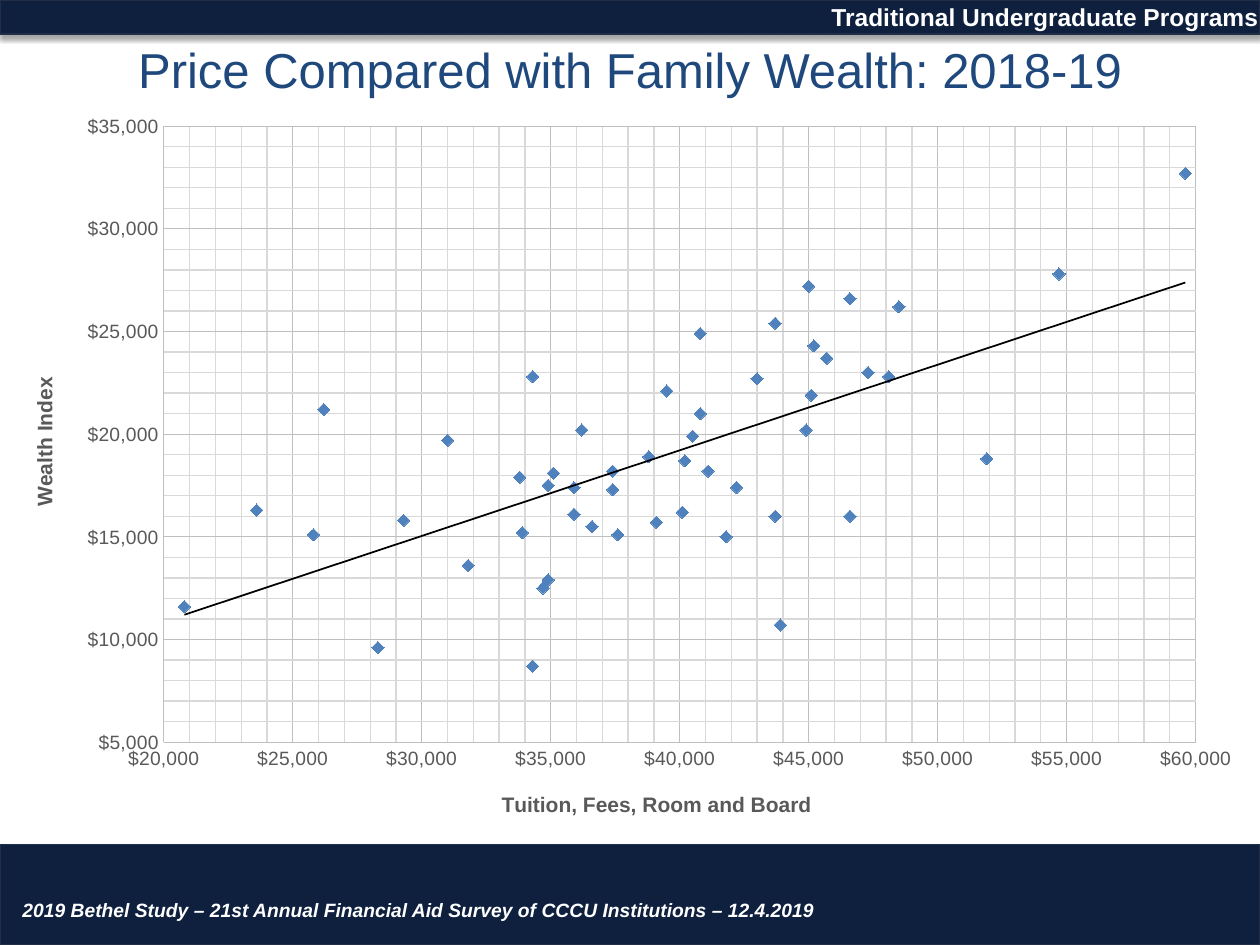
import pptx
import pptx.chart.data
import pptx.dml.color
import pptx.enum.chart
import pptx.enum.shapes
import pptx.enum.text
import pptx.oxml
import pptx.oxml.ns
import pptx.util

WIDTH, HEIGHT = 10, 7.5
FONT = "Arial"
COLORS = {
    "navy": "0E203E", "border": "222D46", "title": "1F497D", "white": "FFFFFF",
    "label": "595959", "grid": "BFBFBF", "minor": "D9D9D9", "marker": "4F81BD", "trend": "000000",
}
TITLE = "Price Compared with Family Wealth: 2018-19"
BANDS = [(0, 0.27), (6.7, 0.8)]
CAPTIONS = [
    ("2019 Bethel Study – 21st Annual Financial Aid Survey of CCCU Institutions – 12.4.2019",
     (0.08, 7.08, 7.33, 0.27), 11, True),
    ("Traditional Undergraduate Programs", (6.5, -0.03, 3.92, 0.34), 14, False),
]
PRICE_AND_WEALTH = [
    (45200, 24300), (37400, 18200), (35900, 16100), (48100, 22800), (51900, 18800), (34300, 8700),
    (37600, 15100), (45000, 27200), (34300, 22800), (43000, 22700), (33800, 17900), (34900, 12900),
    (40500, 19900), (31800, 13600), (40100, 16200), (37400, 17300), (47300, 23000), (48500, 26200),
    (33900, 15200), (36600, 15500), (26200, 21200), (43900, 10700), (41800, 15000), (34900, 17500),
    (35100, 18100), (36200, 20200), (29300, 15800), (25800, 15100), (40800, 24900), (20800, 11600),
    (46600, 16000), (45700, 23700), (39500, 22100), (40800, 21000), (40200, 18700), (35900, 17400),
    (31000, 19700), (45100, 21900), (39100, 15700), (42200, 17400), (54700, 27800), (34700, 12500),
    (38800, 18900), (43700, 25400), (23600, 16300), (41100, 18200), (43700, 16000), (28300, 9600),
    (59600, 32700), (46600, 26600), (44900, 20200),
]
PLOT_AREA = {"x": 0.13, "y": 0.036, "w": 0.819, "h": 0.833}
AXES = [
    ("category_axis", "Tuition, Fees, Room and Board", 20000, 60000, {"x": 0.395, "y": 0.93}, 0),
    ("value_axis", "Wealth Index", 5000, 35000, {"x": 0.022, "y": 0.37}, -90),
]


def color(name):
    return pptx.dml.color.RGBColor.from_string(COLORS[name])


def box(left, top, width, height):
    return [pptx.util.Inches(length) for length in (left, top, width, height)]


def style_font(font, size, name, bold=False, italic=False):
    font.name, font.size = FONT, pptx.util.Pt(size)
    font.bold, font.italic = bold, italic
    font.color.rgb = color(name)


def style_line(line, name, width=0.75):
    line.color.rgb = color(name)
    line.width = pptx.util.Pt(width)


def xml(text):
    namespaces = pptx.oxml.ns.nsdecls("a", "c")
    return pptx.oxml.parse_xml(text.replace(">", f" {namespaces}>", 1))


def line_properties(name, width):
    return xml(
        f'<c:spPr><a:ln w="{pptx.util.Pt(width)}"><a:solidFill>'
        f'<a:srgbClr val="{COLORS[name]}"/></a:solidFill></a:ln></c:spPr>')


def set_layout(parent, position, shares, inner=False):
    for layout in parent.findall(pptx.oxml.ns.qn("c:layout")):
        parent.remove(layout)
    modes = ['<c:layoutTarget val="inner"/>'] if inner else []
    modes += [f'<c:{key}Mode val="edge"/>' for key in shares if key in "xy"]
    values = [f'<c:{key} val="{share}"/>' for key, share in shares.items()]
    content = "".join(modes + values)
    parent.insert(position, xml(f"<c:layout><c:manualLayout>{content}</c:manualLayout></c:layout>"))


def add_band(slide, top, height):
    band = slide.shapes.add_shape(pptx.enum.shapes.MSO_SHAPE.RECTANGLE, *box(0, top, WIDTH, height))
    band.fill.solid()
    band.fill.fore_color.rgb = color("navy")
    style_line(band.line, "border")
    band.shadow.inherit = False
    effects = band._element.spPr.find(pptx.oxml.ns.qn("a:effectLst"))
    effects.append(xml(
        '<a:outerShdw blurRad="39370" dist="22860" dir="5400000" rotWithShape="0">'
        '<a:srgbClr val="000000"><a:alpha val="35000"/></a:srgbClr></a:outerShdw>'))


def add_title(slide):
    title = slide.shapes.title
    title.left, title.top, title.width, title.height = box(0.5, 0.3, 9, 0.49)
    frame = title.text_frame
    frame.vertical_anchor = pptx.enum.text.MSO_ANCHOR.MIDDLE
    paragraph = frame.paragraphs[0]
    paragraph.alignment = pptx.enum.text.PP_ALIGN.CENTER
    run = paragraph.add_run()
    run.text = TITLE
    style_font(run.font, 28, "title")


def add_caption(slide, text, place, size, italic):
    frame = slide.shapes.add_textbox(*box(*place)).text_frame
    frame.word_wrap = True
    run = frame.paragraphs[0].add_run()
    run.text = text
    style_font(run.font, size, "white", True, italic)


def format_axis(axis, title, minimum, maximum, place, rotation):
    axis.minimum_scale, axis.maximum_scale = minimum, maximum
    axis.major_unit, axis.minor_unit = 5000, 1000
    axis.has_major_gridlines = axis.has_minor_gridlines = True
    style_line(axis.major_gridlines.format.line, "grid")
    minor_gridlines = axis._element.find(pptx.oxml.ns.qn("c:minorGridlines"))
    minor_gridlines.append(line_properties("minor", 0.75))
    style_line(axis.format.line, "grid")
    axis.major_tick_mark = axis.minor_tick_mark = pptx.enum.chart.XL_TICK_MARK.NONE
    axis.tick_labels.number_format = '"$"#,##0'
    axis.tick_labels.number_format_is_linked = False
    style_font(axis.tick_labels.font, 11, "label")
    frame = axis.axis_title.text_frame
    run = frame.paragraphs[0].add_run()
    run.text = title
    style_font(run.font, 12, "label", True)
    body = next(axis.axis_title._element.iter(pptx.oxml.ns.qn("a:bodyPr")))
    body.set("rot", str(rotation * 60000))
    body.set("vert", "horz")
    set_layout(axis.axis_title._element, 1, place)


def add_scatter(slide):
    data = pptx.chart.data.XyChartData()
    points = data.add_series("Series 1")
    for price, wealth in PRICE_AND_WEALTH:
        points.add_data_point(price, wealth)
    chart = slide.shapes.add_chart(
        pptx.enum.chart.XL_CHART_TYPE.XY_SCATTER, *box(0, 0.79, WIDTH, 5.87), data).chart
    chart.has_title = chart.has_legend = False
    style_font(chart.font, 10, "trend")
    plot = chart.plots[0]
    plot.vary_by_categories = False
    series = plot.series[0]
    series.smooth = False
    series.format.line.fill.background()
    series.marker.style = pptx.enum.chart.XL_MARKER_STYLE.DIAMOND
    series.marker.size = 7
    series.marker.format.fill.solid()
    series.marker.format.fill.fore_color.rgb = color("marker")
    style_line(series.marker.format.line, "marker")
    trendline = xml(
        '<c:trendline><c:trendlineType val="linear"/>'
        '<c:dispRSqr val="0"/><c:dispEq val="0"/></c:trendline>')
    trendline.insert(0, line_properties("trend", 1))
    series._element.find(pptx.oxml.ns.qn("c:xVal")).addprevious(trendline)
    for name, *settings in AXES:
        format_axis(getattr(chart, name), *settings)
    plot_area = next(chart._chartSpace.iter(pptx.oxml.ns.qn("c:plotArea")))
    set_layout(plot_area, 0, PLOT_AREA, inner=True)


def main():
    presentation = pptx.Presentation()
    presentation.slide_width = pptx.util.Inches(WIDTH)
    presentation.slide_height = pptx.util.Inches(HEIGHT)
    slide = presentation.slides.add_slide(presentation.slide_layouts[5])
    for band in BANDS:
        add_band(slide, *band)
    add_title(slide)
    add_scatter(slide)
    for caption in CAPTIONS:
        add_caption(slide, *caption)
    presentation.save("out.pptx")


if __name__ == "__main__":
    main()
